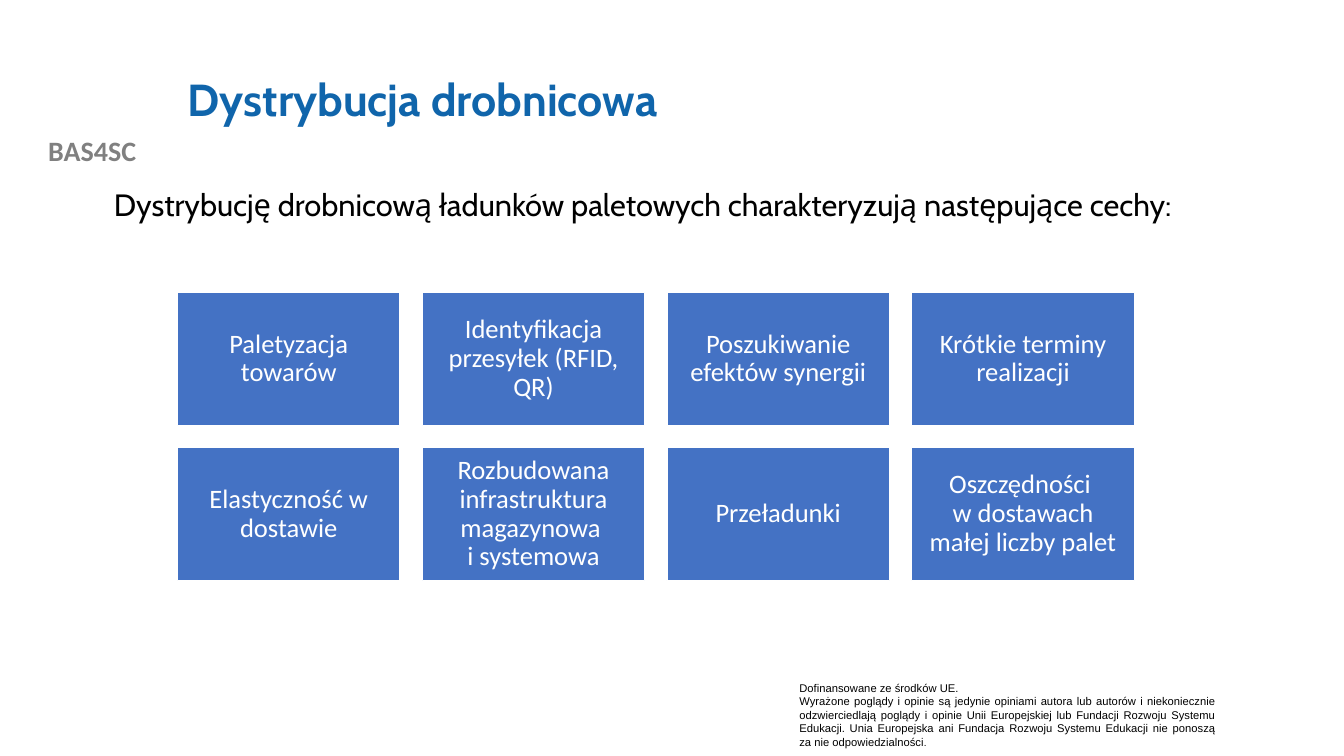
from pptx import Presentation
from pptx.dml.color import RGBColor
from pptx.enum.shapes import MSO_SHAPE
from pptx.enum.text import MSO_ANCHOR, PP_ALIGN
from pptx.util import Inches, Pt

BLUE, INK, GREY, TILE, WHITE = "1065AB", "000000", "808080", "4472C4", "FFFFFF"
TRAITS = [
    "Paletyzacja towarów",
    "Identyfikacja przesyłek (RFID, QR)",
    "Poszukiwanie efektów synergii",
    "Krótkie terminy realizacji",
    "Elastyczność w dostawie",
    "Rozbudowana infrastruktura magazynowa \ni systemowa",
    "Przeładunki",
    "Oszczędności \nw dostawach małej liczby palet",
]
NOTICE = [
    "Dofinansowane ze środków UE.",
    "Wyrażone poglądy i opinie są jedynie opiniami autora lub autorów "
    "i niekoniecznie odzwierciedlają poglądy i opinie Unii Europejskiej lub "
    "Fundacji Rozwoju Systemu Edukacji. Unia Europejska ani Fundacja Rozwoju "
    "Systemu Edukacji nie ponoszą za nie odpowiedzialności",
]


def tint(code):
    return RGBColor.from_string(code)


def style(run, size, name, color, bold=False):
    for key, value in {"size": Pt(size), "name": name, "bold": bold}.items():
        setattr(run.font, key, value)
    run.font.color.rgb = tint(color)


def write(para, text, font, **form):
    para.text = text
    for key, value in form.items():
        setattr(para, key, value)
    for run in para.runs:
        style(run, *font)


def add_text(slide, box):
    frame = slide.shapes.add_textbox(*map(Inches, box)).text_frame
    frame.word_wrap = True
    return frame


def add_title(slide, box, text):
    title = slide.shapes.title
    title.left, title.top, title.width, title.height = map(Inches, box)
    frame = title.text_frame
    frame.word_wrap = True
    frame.vertical_anchor = MSO_ANCHOR.MIDDLE
    write(frame.paragraphs[0], text, (32, "Cabin", BLUE, True),
          alignment=PP_ALIGN.LEFT, line_spacing=0.9)


def add_label(slide, box, text):
    frame = add_text(slide, box)
    write(frame.paragraphs[0], text, (20, "Calibri", GREY, True),
          alignment=PP_ALIGN.CENTER)


def add_lead(slide, box, text):
    frame = add_text(slide, box)
    write(frame.paragraphs[0], text, (22, "Cabin", INK), line_spacing=0.9)


def add_tile(slide, box, text):
    tile = slide.shapes.add_shape(MSO_SHAPE.RECTANGLE, *map(Inches, box))
    tile.shadow.inherit = False
    tile.fill.solid()
    tile.fill.fore_color.rgb = tint(TILE)
    tile.line.color.rgb = tint(WHITE)
    tile.line.width = Pt(1)
    frame = tile.text_frame
    frame.word_wrap = True
    frame.vertical_anchor = MSO_ANCHOR.MIDDLE
    for side in ("left", "top", "right", "bottom"):
        setattr(frame, f"margin_{side}", Inches(0.08))
    write(frame.paragraphs[0], text, (19, "Calibri", WHITE),
          alignment=PP_ALIGN.CENTER, line_spacing=0.9)


def add_grid(slide, box, texts, cols=4, gap=0.22):
    left, top, width, height = box
    rows = len(texts) // cols
    wide = (width - gap * (cols - 1)) / cols
    high = (height - gap * (rows - 1)) / rows
    for i, text in enumerate(texts):
        row, col = divmod(i, cols)
        spot = (left + col * (wide + gap), top + row * (high + gap), wide, high)
        add_tile(slide, spot, text)


def add_notice(slide, box, texts):
    frame = add_text(slide, box)
    for i, text in enumerate(texts):
        para = frame.add_paragraph() if i else frame.paragraphs[0]
        write(para, text, (8, "Arial", INK), alignment=PP_ALIGN.JUSTIFY)
    # The closing full stop is a little smaller
    stop = para.add_run()
    stop.text = "."
    style(stop, 7, "Arial", INK)


def main():
    deck = Presentation()
    deck.slide_width, deck.slide_height = Inches(13.33), Inches(7.5)
    slide = deck.slides.add_slide(deck.slide_layouts[5])

    # Project label and funding notice
    add_label(slide, (0, 1.28, 1.83, 0.44), "BAS4SC")
    add_notice(slide, (7.83, 6.71, 4.33, 0.77), NOTICE)

    # Heading and lead sentence
    add_title(slide, (1.76, 0.4, 10.66, 1.22), "Dystrybucja drobnicowa")
    add_lead(slide, (1.03, 1.84, 11.65, 0.5),
             "Dystrybucję drobnicową ładunków paletowych "
             "charakteryzują następujące cechy:")

    # Grid of traits
    add_grid(slide, (1.76, 2.9, 9.49, 2.86), TRAITS)
    deck.save("out.pptx")


if __name__ == "__main__":
    main()
